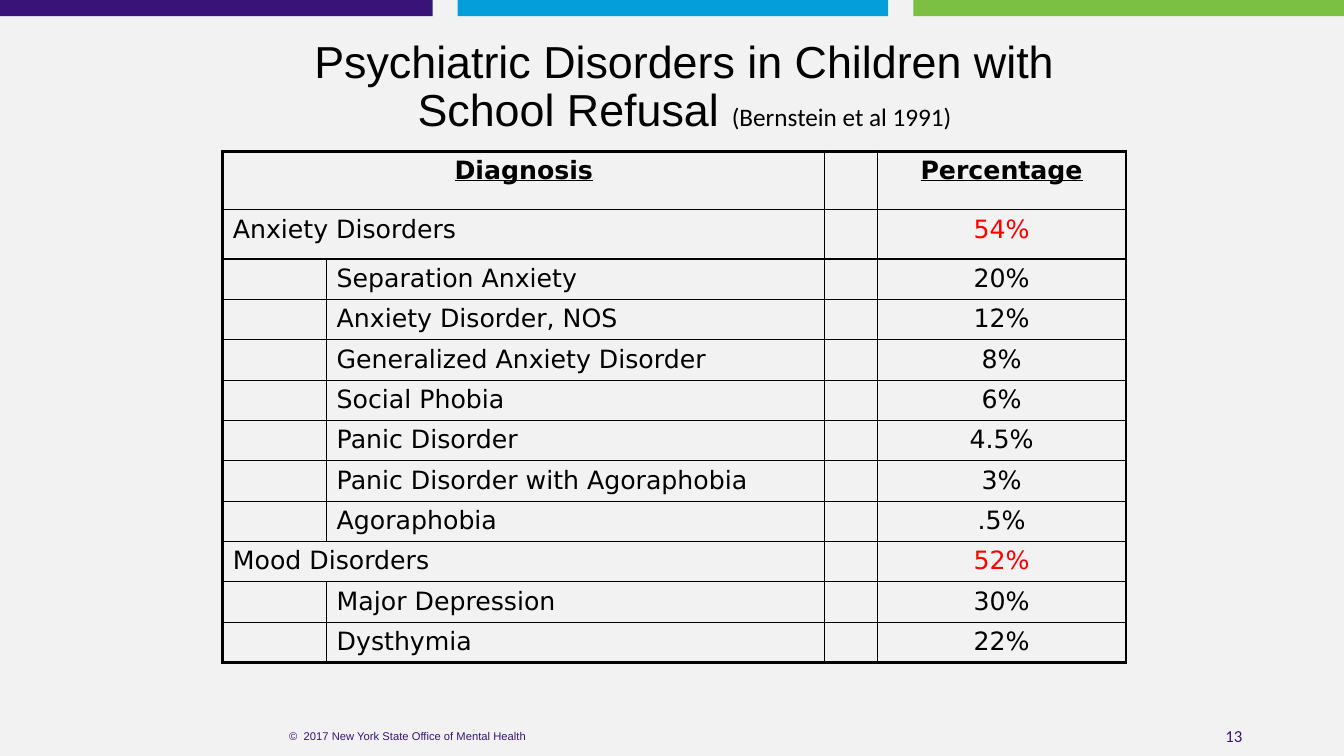
from lxml import etree
from pptx import Presentation
from pptx.dml.color import RGBColor
from pptx.enum.shapes import MSO_SHAPE as SHAPE
from pptx.enum.text import MSO_ANCHOR as ANCHOR, PP_ALIGN as ALIGN
from pptx.oxml.ns import qn
from pptx.util import Inches, Pt


def rgb(color):
    return RGBColor.from_string(color)


def add_run(p, text, size, font, color="000000"):
    r = p.add_run()
    r.text = text
    r.font.size, r.font.name = Pt(size), font
    r.font.color.rgb = rgb(color)
    return r


prs = Presentation()
prs.slide_width, prs.slide_height = Inches(13.33), Inches(7.5)
s = prs.slides.add_slide(prs.slide_layouts[6])
s.background.fill.solid()
s.background.fill.fore_color.rgb = rgb("F2F2F2")

# Colour bars along the top
for left, width, color in [(0, 4.29, "391378"), (4.54, 4.27, "049FDA"), (9.06, 4.27, "7BBF43")]:
    bar = s.shapes.add_shape(SHAPE.RECTANGLE, Inches(left), 0, Inches(width), Inches(0.16))
    bar.shadow.inherit = False
    bar.fill.solid()
    bar.fill.fore_color.rgb = rgb(color)
    bar.line.fill.background()

# Title, footer and slide number
texts = [
    (2.79, 0.25, 8, 1.25, ALIGN.CENTER, 0.9,
     [("Psychiatric Disorders in Children with School Refusal ", 32, "Arial", "000000"),
      ("(Bernstein et al 1991)", 18, "Calibri", "000000")]),
    (1.81, 7.1, 4.47, 0.4, ALIGN.CENTER, 1.0,
     [("©  2017 New York State Office of Mental Health", 8, "Arial", "391378")]),
    (9.42, 7.1, 3, 0.4, ALIGN.RIGHT, 1.0, [("13", 12, "Calibri", "391378")]),
]
for left, top, width, height, align, spacing, runs in texts:
    sp = s.shapes.add_textbox(Inches(left), Inches(top), Inches(width), Inches(height))
    tf = sp.text_frame
    tf.word_wrap = True
    tf.vertical_anchor = ANCHOR.MIDDLE
    p = tf.paragraphs[0]
    p.alignment, p.line_spacing = align, spacing
    for run in runs:
        add_run(p, *run)

# Diagnosis table: group rows span the first two columns
HEADER, GROUP, ITEM = range(3)
rows = [
    (HEADER, "Diagnosis", "Percentage"),
    (GROUP, "Anxiety Disorders", "54%"),
    (ITEM, "Separation Anxiety", "20%"),
    (ITEM, "Anxiety Disorder, NOS", "12%"),
    (ITEM, "Generalized Anxiety Disorder", "8%"),
    (ITEM, "Social Phobia", "6%"),
    (ITEM, "Panic Disorder", "4.5%"),
    (ITEM, "Panic Disorder with Agoraphobia", "3%"),
    (ITEM, "Agoraphobia", ".5%"),
    (GROUP, "Mood Disorders", "52%"),
    (ITEM, "Major Depression", "30%"),
    (ITEM, "Dysthymia", "22%"),
]
col_widths = [1.03, 4.94, 0.52, 2.47]
row_heights = [0.58, 0.49] + [0.39] * (len(rows) - 2)
last_row, last_col = len(rows) - 1, len(col_widths) - 1
table = s.shapes.add_table(len(rows), len(col_widths), Inches(2.21), Inches(1.5),
                           Inches(sum(col_widths)), Inches(sum(row_heights))).table
table.first_row = table.horz_banding = False
for col, width in zip(table.columns, col_widths):
    col.width = Inches(width)
for row, height in zip(table.rows, row_heights):
    row.height = Inches(height)

for i, (kind, diagnosis, percentage) in enumerate(rows):
    if kind != ITEM:
        table.cell(i, 0).merge(table.cell(i, 1))
    name_col = 1 if kind == ITEM else 0
    for j, text in [(name_col, diagnosis), (last_col, percentage)]:
        p = table.cell(i, j).text_frame.paragraphs[0]
        centred = kind == HEADER or j == last_col
        p.alignment = ALIGN.CENTER if centred else ALIGN.LEFT
        color = "FF0000" if kind == GROUP and j == last_col else "000000"
        r = add_run(p, text, 18, "DejaVu Sans", color)
        r.font.bold = r.font.underline = kind == HEADER

    # Thin grid lines with a thick outer frame
    for j in range(len(col_widths)):
        cell = table.cell(i, j)
        cell.fill.background()
        if not cell.text_frame.text:
            cell.margin_top = cell.margin_bottom = 0
        tcPr = cell._tc.get_or_add_tcPr()
        edges = [("a:lnL", j == 0), ("a:lnR", j == last_col),
                 ("a:lnT", i == 0), ("a:lnB", i == last_row)]
        for k, (tag, outer) in enumerate(edges):
            ln = etree.Element(qn(tag), w=str(Pt(2.25 if outer else 1)))
            fill = etree.SubElement(ln, qn("a:solidFill"))
            etree.SubElement(fill, qn("a:srgbClr"), val="000000")
            tcPr.insert(k, ln)

prs.save("out.pptx")
